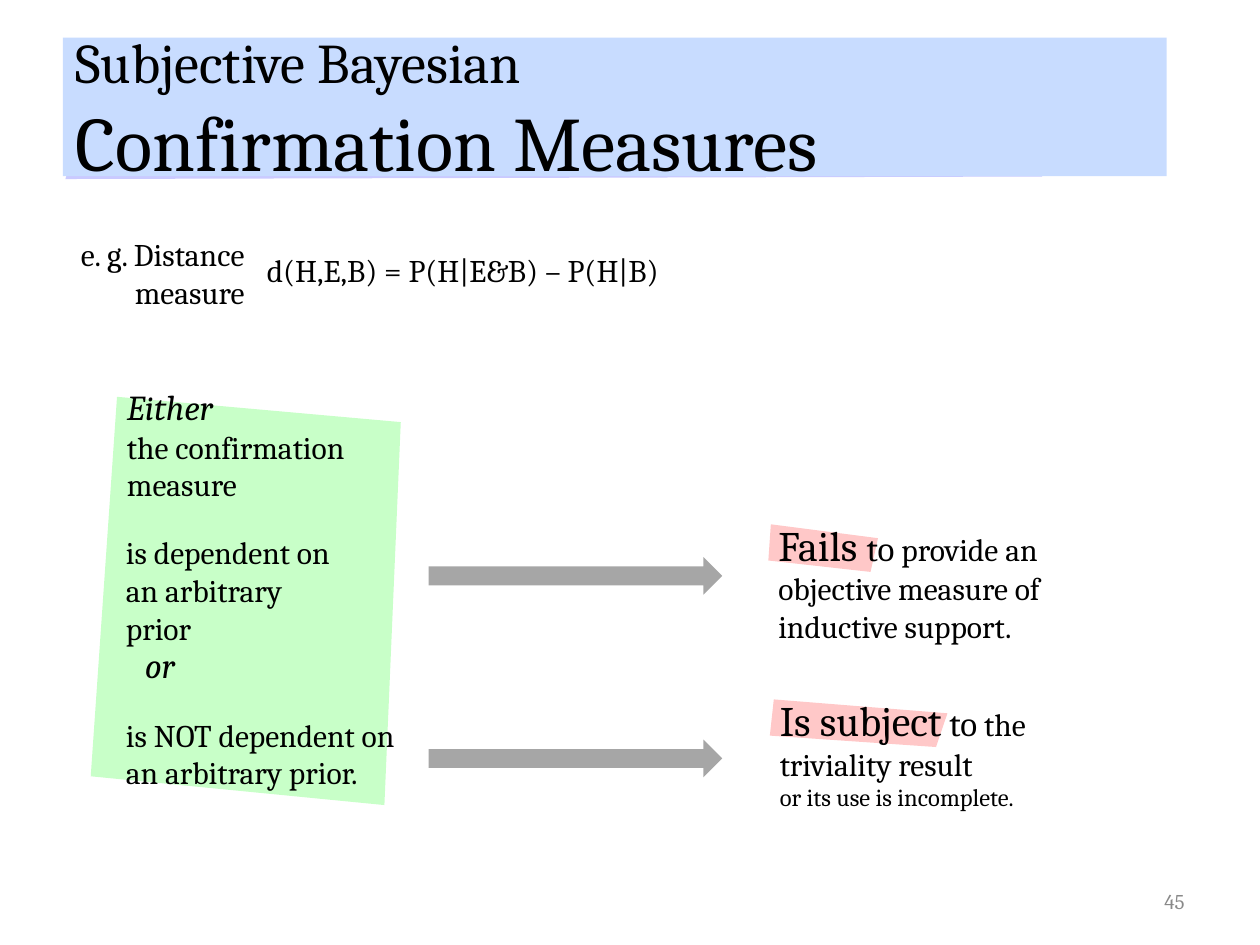
"""Build the slide on subjective Bayesian confirmation measures."""
from dataclasses import dataclass
from typing import NamedTuple

from pptx import Presentation
from pptx.dml.color import RGBColor as Rgb
from pptx.enum.shapes import MSO_SHAPE as Kind
from pptx.enum.text import MSO_ANCHOR as Anchor, MSO_AUTO_SIZE as Fit, PP_ALIGN as Align
from pptx.util import Cm, Pt


@dataclass(frozen=True)
class Theme:
    font: str = "Cambria"
    ink: str = "000000"
    dim: str = "898989"
    band: str = "C8DCFF"
    edge: str = "CACAFF"
    green: str = "C8FFC8"
    pink: str = "FFC8C8"
    gray: str = "A6A6A6"
    head: int = 44
    top: int = 32
    key: int = 24
    mid: int = 20
    body: int = 18
    note: int = 14
    tiny: int = 12


class Run(NamedTuple):
    text: str
    size: int
    slant: bool = False


class Box(NamedTuple):
    left: float
    top: float
    wide: float
    high: float


class Patch(NamedTuple):
    points: list[tuple[float, float]]
    fill: str


class Claim(NamedTuple):
    patch: Patch
    arrow: Box
    box: Box
    lines: list[list[Run]]


LOOK = Theme()


def paint(shape, fill: str) -> None:
    """Give a shape a plain fill with no line or shadow."""
    shape.fill.solid()
    shape.fill.fore_color.rgb = Rgb.from_string(fill)
    shape.line.fill.background()
    shape.shadow.inherit = False


def draw_patch(slide, patch: Patch) -> None:
    """Draw a filled four-sided patch."""
    first, *rest = [(Cm(x), Cm(y)) for x, y in patch.points]
    pen = slide.shapes.build_freeform(*first, scale=1.0)
    pen.add_line_segments(rest, close=True)
    paint(pen.convert_to_shape(), patch.fill)


def draw_arrow(slide, box: Box) -> None:
    """Draw a block arrow pointing right."""
    paint(slide.shapes.add_shape(Kind.RIGHT_ARROW, *map(Cm, box)), LOOK.gray)


def write(slide, box: Box, lines: list[list[Run]], *, align=Align.LEFT, anchor=Anchor.TOP,
          color: str = LOOK.ink, fill: str | None = None, wrap: bool = True, grow: bool = True):
    """Write lines of runs in a text box."""
    shape = slide.shapes.add_textbox(*map(Cm, box))
    if fill:
        paint(shape, fill)
    frame = shape.text_frame
    frame.word_wrap = wrap
    frame.auto_size = Fit.SHAPE_TO_FIT_TEXT if grow else Fit.NONE
    frame.vertical_anchor = anchor
    for i, line in enumerate(lines):
        para = frame.add_paragraph() if i else frame.paragraphs[0]
        para.alignment = align
        for j, part in enumerate(line):
            if j and line[j - 1].size == LOOK.top:
                para.add_line_break()
            run = para.add_run()
            run.text = part.text
            font = run.font
            font.name, font.size, font.italic = LOOK.font, Pt(part.size), part.slant
            font.color.rgb = Rgb.from_string(color)
    return shape


CLAIMS = [
    Claim(Patch([(15.54, 10.57), (17.7, 10.85), (17.55, 11.53), (15.49, 11.3)], LOOK.pink),
          Box(8.64, 11.23, 5.92, 0.76), Box(15.44, 10.34, 6.6, 2.82),
          [[Run("Fails ", LOOK.key), Run("to", LOOK.mid),
            Run(" provide an objective measure of inductive support.", LOOK.body)]]),
    Claim(Patch([(15.6, 14.1), (19.1, 14.38), (18.87, 15.06), (15.52, 14.83)], LOOK.pink),
          Box(8.64, 14.91, 5.92, 0.76), Box(15.47, 13.87, 7.49, 2.64),
          [[Run("Is subject", LOOK.key), Run(" to", LOOK.mid),
            Run(" the triviality result", LOOK.body)],
           [Run("or its use is incomplete.", LOOK.note)]]),
]


def main() -> None:
    """Build and save the deck."""
    deck = Presentation()
    deck.slide_width, deck.slide_height = Cm(25.4), Cm(19.05)
    slide = deck.slides.add_slide(deck.slide_layouts[6])

    draw_patch(slide, Patch([(2.13, 0.97), (20.68, 2.34), (21.01, 3.56), (1.32, 3.61)], LOOK.edge))
    write(slide, Box(1.27, 0.76, 22.25, 2.79),
          [[Run("Subjective Bayesian", LOOK.top), Run("Confirmation Measures", LOOK.head)]],
          anchor=Anchor.MIDDLE, fill=LOOK.band, grow=False)
    write(slide, Box(18.21, 17.65, 5.92, 1.02), [[Run("45", LOOK.tiny)]],
          align=Align.RIGHT, anchor=Anchor.MIDDLE, color=LOOK.dim, grow=False)

    write(slide, Box(1.12, 4.62, 4.06, 1.8), [[Run("e. g. Distance measure", LOOK.body)]],
          align=Align.RIGHT)
    write(slide, Box(5.13, 4.93, 8.69, 1.02),
          [[Run("d(H,E,B) = P(H|E&B) – P(H|B)", LOOK.body)]], wrap=False)

    draw_patch(slide, Patch([(2.36, 8), (8.08, 8.51), (7.75, 16.23), (1.83, 15.65)], LOOK.green))
    write(slide, Box(2.31, 7.65, 6.22, 2.64),
          [[Run("Either", LOOK.mid, True)], [Run("the confirmation measure", LOOK.body)]])
    write(slide, Box(2.29, 10.62, 4.88, 1.8),
          [[Run("is dependent on an arbitrary prior", LOOK.body)]])
    write(slide, Box(2.67, 12.85, 1.35, 1.12), [[Run("or", LOOK.mid, True)]], wrap=False)
    write(slide, Box(2.29, 14.3, 6.4, 1.8),
          [[Run("is NOT dependent on an arbitrary prior.", LOOK.body)]])

    for claim in CLAIMS:
        draw_patch(slide, claim.patch)
        draw_arrow(slide, claim.arrow)
        write(slide, claim.box, claim.lines)

    deck.save("out.pptx")


if __name__ == "__main__":
    main()
